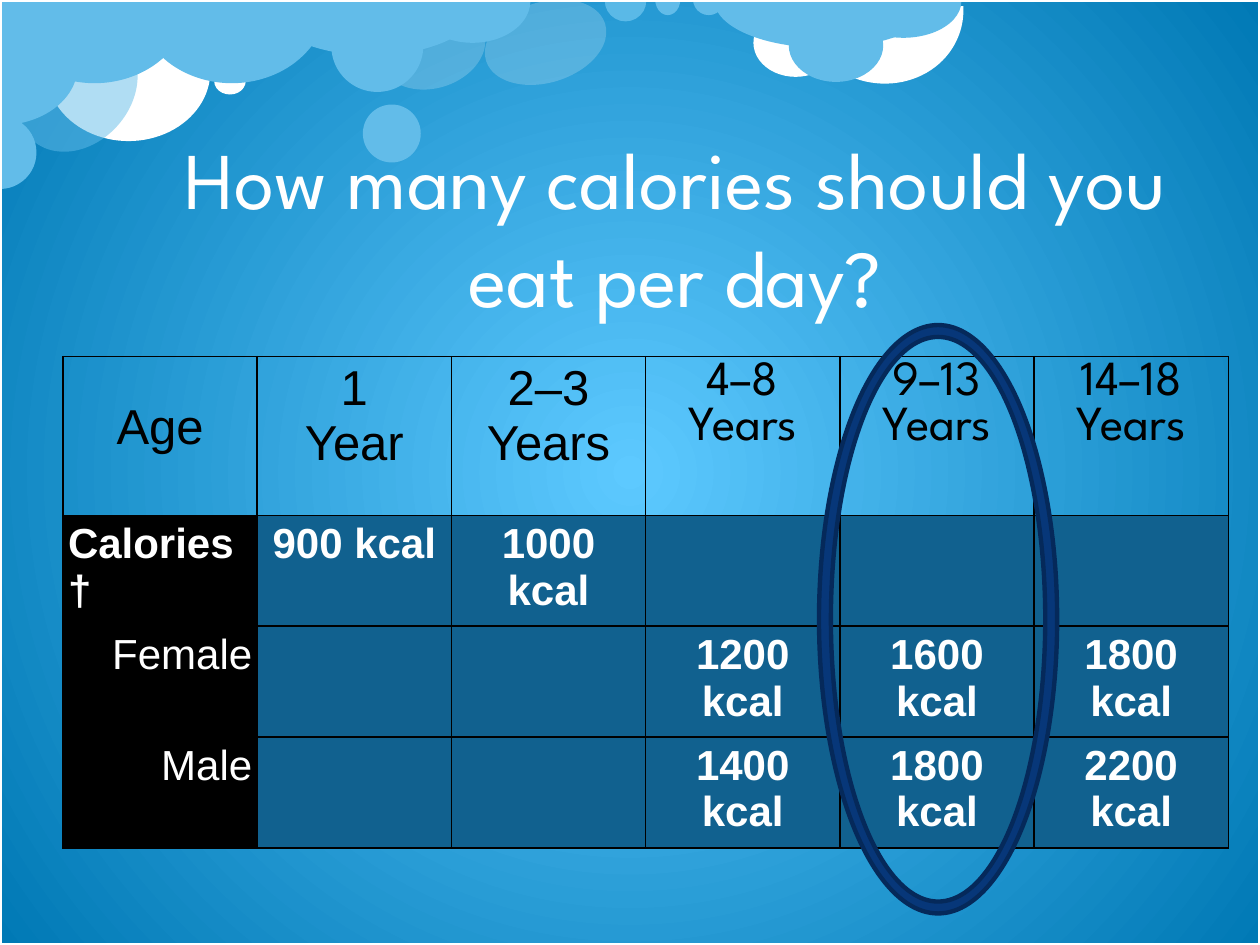
from lxml.etree import SubElement
from pptx import Presentation
from pptx.dml.color import RGBColor
from pptx.enum.shapes import MSO_SHAPE
from pptx.enum.text import MSO_ANCHOR, PP_ALIGN
from pptx.oxml import parse_xml
from pptx.oxml.ns import nsdecls, qn
from pptx.util import Inches, Pt

COLORS = {
    "glow": "5DC9FF", "deep": "0079B5", "white": "FFFFFF", "black": "000000",
    "cloud": "62BCE9", "pale": "8FD9FB", "cell": "11618F",
    "ring": "073779", "ring_line": "05295A",
}
BODY, DISPLAY = "Arial", "League Spartan"
OVAL, PIE, ARC = MSO_SHAPE.OVAL, MSO_SHAPE.PIE, MSO_SHAPE.ARC
HALF = (0, 108)

CLOUDS = [
    (OVAL, (3.11, -0.05, 0.64, 0.86), "white", {"rot": 72.8, "alpha": 20}),
    (OVAL, (0.37, 0.01, 1.3, 1.11), "white", {}),
    (ARC, (6.39, -0.6, 1.21, 1.31), "white", {"rot": 106.5, "adj": (151.8, 44.48)}),
    (OVAL, (5.98, 0.07, 0.67, 0.54), "white", {}),
    (PIE, (-0.01, -0.66, 1.52, 1.32), "cloud", {"adj": HALF}),
    (PIE, (2.08, -0.44, 1.75, 0.88), "cloud", {"adj": HALF}),
    (OVAL, (2.88, 0.83, 0.46, 0.46), "cloud", {}),
    (OVAL, (0.19, 0.18, 0.85, 1.07), "cloud", {"rot": 41.8, "alpha": 50}),
    (PIE, (-0.29, 0.92, 0.58, 0.58), "cloud", {"rot": 270, "adj": HALF}),
    (OVAL, (1.7, 0.54, 0.25, 0.21), "white", {}),
    (PIE, (1.08, -0.66, 1.52, 1.32), "cloud", {"adj": HALF}),
    (PIE, (5.67, -0.37, 1.75, 0.75), "cloud", {"adj": HALF}),
    (OVAL, (6.26, 0.07, 0.75, 0.58), "cloud", {}),
    (PIE, (6.71, -0.28, 0.92, 0.58), "cloud", {"adj": HALF}),
    (OVAL, (4.01, -0.16, 0.64, 0.99), "white", {"rot": 72.8, "alpha": 20}),
    (PIE, (4.8, -0.16, 0.33, 0.33), "pale", {"adj": HALF, "alpha": 50}),
    (PIE, (5.2, -0.13, 0.2, 0.25), "cloud", {"adj": HALF}),
    (PIE, (5.5, -0.13, 0.25, 0.25), "cloud", {"adj": HALF}),
    (OVAL, (2.63, 0, 0.73, 0.73), "cloud", {}),
    (PIE, (3.29, -0.33, 0.92, 0.67), "cloud", {"adj": HALF}),
    (PIE, (-0.47, -0.09, 0.93, 1.24), "cloud", {"rot": 270, "adj": HALF}),
]

ROWS = [
    ["Age", "1\nYear", "2–3\nYears", "4–8\nYears", "9–13\nYears", "14–18\nYears"],
    ["Calories†", "900 kcal", "1000 kcal", "", "", ""],
    ["Female", "", "", "1200 kcal", "1600 kcal", "1800 kcal"],
    ["Male", "", "", "1400 kcal", "1800 kcal", "2200 kcal"],
]


def rgb(name):
    return RGBColor.from_string(COLORS[name])


def set_background(s):
    fill = s.background.fill
    fill.gradient()
    for stop, name, pos in zip(fill.gradient_stops, ("glow", "deep"), (0, 1)):
        stop.color.rgb = rgb(name)
        stop.position = pos
    grad = s.element.find(".//" + qn("a:gradFill"))
    lin = grad.find(qn("a:lin"))
    grad.replace(lin, parse_xml(
        f'<a:path {nsdecls("a")} path="circle">'
        '<a:fillToRect l="50000" t="50000" r="50000" b="50000"/></a:path>'))


def add_shape(s, kind, box, fill=None, line=None, width=0, rot=0, adj=(), alpha=None):
    sp = s.shapes.add_shape(kind, *map(Inches, box))
    sp.shadow.inherit = False
    sp.rotation = rot
    for i, value in enumerate(adj):
        sp.adjustments[i] = value
    if fill:
        sp.fill.solid()
        sp.fill.fore_color.rgb = rgb(fill)
    else:
        sp.fill.background()
    if line:
        sp.line.color.rgb = rgb(line)
        sp.line.width = Pt(width)
    else:
        sp.line.fill.background()
    if alpha is not None:
        color = sp.element.spPr.find(qn("a:solidFill"))[0]
        SubElement(color, qn("a:alpha")).set("val", str(alpha * 1000))
    return sp


def set_text(tf, text, size=24, font=BODY, color="white", bold=False,
             align=PP_ALIGN.CENTER, spacing=None):
    p = tf.paragraphs[0]
    p.text = text
    p.alignment = align
    if spacing:
        p.line_spacing = spacing
    for r in p.runs:
        r.font.size = Pt(size)
        r.font.name = font
        r.font.bold = bold
        r.font.color.rgb = rgb(color)


def add_title(s, text):
    sp = s.shapes.add_textbox(*map(Inches, (1.14, 1, 8.44, 1.58)))
    tf = sp.text_frame
    tf.word_wrap = True
    tf.vertical_anchor = MSO_ANCHOR.MIDDLE
    set_text(tf, text, size=46, font=DISPLAY, spacing=Pt(56))


def set_borders(cell):
    tc_pr = cell._tc.get_or_add_tcPr()
    for i, side in enumerate(("lnL", "lnR", "lnT", "lnB")):
        tc_pr.insert(i, parse_xml(
            f'<a:{side} {nsdecls("a")} w="12700"><a:solidFill>'
            f'<a:srgbClr val="{COLORS["black"]}"/></a:solidFill></a:{side}>'))


def cell_format(row, col):
    if row == 0:
        return {"size": 28, "color": "black", "font": DISPLAY if col > 2 else BODY}
    if col == 0:
        return {"bold": row == 1, "align": PP_ALIGN.LEFT if row == 1 else PP_ALIGN.RIGHT}
    return {"bold": True}


def add_calorie_table(s):
    box = map(Inches, (0.5, 2.83, 9.25, 3.74))
    table = s.shapes.add_table(len(ROWS), len(ROWS[0]), *box).table
    table.first_row = table.horz_banding = False
    for col in table.columns:
        col.width = Inches(9.25 / len(ROWS[0]))
    for i, row in enumerate(table.rows):
        row.height = Inches(0.83 if i else 1.26)
    for i, texts in enumerate(ROWS):
        for j, text in enumerate(texts):
            cell = table.cell(i, j)
            cell.margin_left = cell.margin_right = Inches(0.04)
            cell.margin_top = cell.margin_bottom = Inches(0.04)
            if i == 0:
                cell.fill.background()
            else:
                cell.fill.solid()
                cell.fill.fore_color.rgb = rgb("cell" if j else "black")
            set_borders(cell)
            set_text(cell.text_frame, text, **cell_format(i, j))
    table.cell(0, 0).margin_top = Inches(0.35)


def main():
    prs = Presentation()
    prs.slide_width, prs.slide_height = Inches(10), Inches(7.5)
    s = prs.slides.add_slide(prs.slide_layouts[6])
    set_background(s)
    for kind, box, fill, options in CLOUDS:
        add_shape(s, kind, box, fill, **options)
    add_shape(s, MSO_SHAPE.RECTANGLE, (0, 0, 10, 7.5), line="white", width=2)
    add_title(s, "How many calories should you eat per day?")
    add_calorie_table(s)
    add_shape(s, MSO_SHAPE.DONUT, (6.5, 2.58, 1.89, 4.67), "ring",
              line="ring_line", width=2.5, adj=(0.05,))
    prs.save("out.pptx")


if __name__ == "__main__":
    main()
